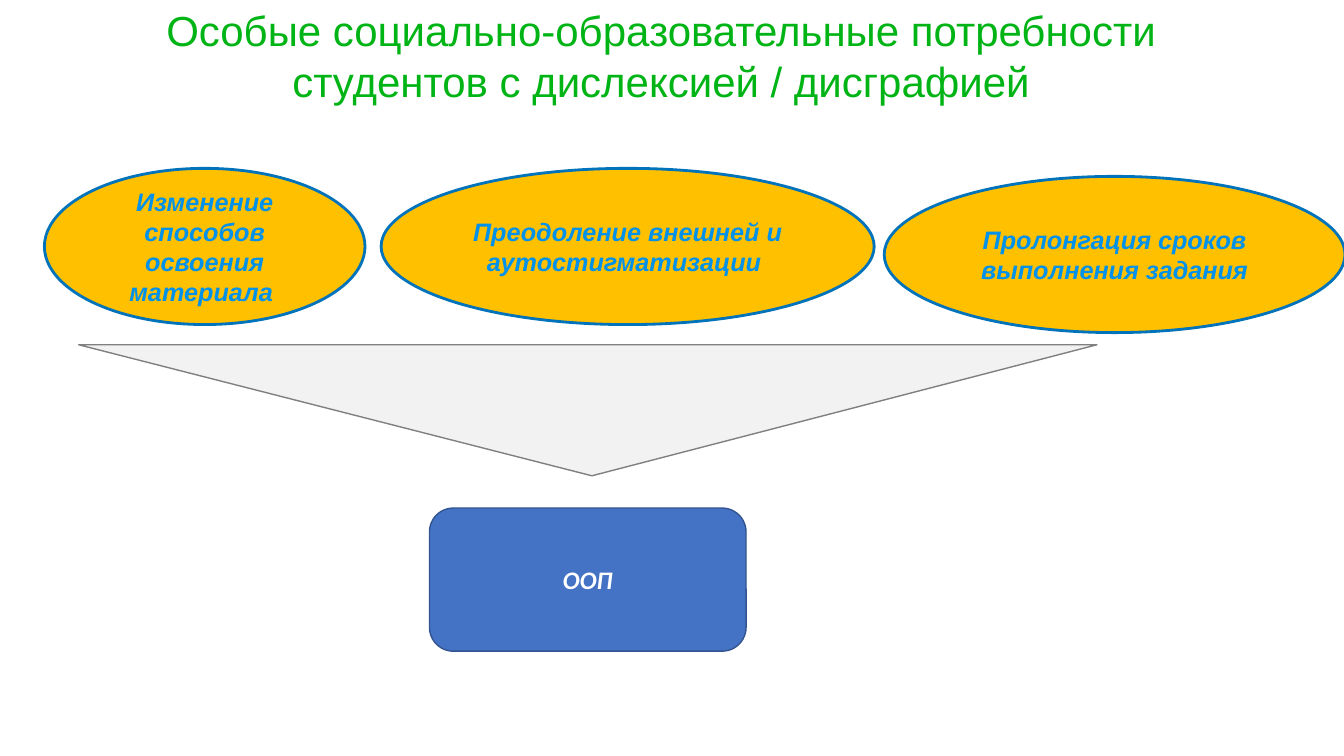
import pptx
import pptx.util
import pptx.dml.color
import pptx.enum.shapes
import pptx.enum.text

RGBColor = pptx.dml.color.RGBColor
Inches = pptx.util.Inches
Pt = pptx.util.Pt
SHAPE = pptx.enum.shapes.MSO_SHAPE
TEXT = pptx.enum.text

GREEN = RGBColor(0x00, 0xB4, 0x15)
AMBER = RGBColor(0xFF, 0xC0, 0x00)
SEA_BLUE = RGBColor(0x00, 0x73, 0xBA)
SKY_BLUE = RGBColor(0x00, 0x91, 0xEA)
PALE_GRAY = RGBColor(0xF2, 0xF2, 0xF2)
GRAY = RGBColor(0x80, 0x80, 0x80)
BLUE = RGBColor(0x44, 0x72, 0xC4)
NAVY = RGBColor(0x32, 0x54, 0x91)
WHITE = RGBColor(0xFF, 0xFF, 0xFF)

WIDTH, HEIGHT = 13.33, 7.5

NEEDS = [
    ("Изменение способов освоения материала ", 0, 0, 3.18),
    ("Преодоление внешней и аутостигматизации ", 3.34, 0, 4.89),
    ("Пролонгация сроков выполнения задания", 8.33, 0.08, 4.57),
]
NEED_HEIGHT = 1.55


def write(frame, text, size, face, color, emphasis):
    frame.word_wrap = True
    paragraph = frame.paragraphs[0]
    paragraph.text = text
    paragraph.alignment = TEXT.PP_ALIGN.CENTER
    font = paragraph.font
    font.size = Pt(size)
    font.name = face
    font.color.rgb = color
    font.bold = font.italic = emphasis


def add_figure(slide, kind, box, fill, outline, weight):
    figure = slide.shapes.add_shape(kind, *map(Inches, box))
    figure.shadow.inherit = False
    figure.fill.solid()
    figure.fill.fore_color.rgb = fill
    figure.line.color.rgb = outline
    figure.line.width = Pt(weight)
    figure.text_frame.vertical_anchor = TEXT.MSO_ANCHOR.MIDDLE
    return figure


def add_title(slide, box):
    title = slide.shapes.add_textbox(*map(Inches, box))
    write(title.text_frame,
          "Особые социально-образовательные потребности студентов с дислексией / дисграфией",
          30, "Arial", GREEN, False)
    title.text_frame.auto_size = TEXT.MSO_AUTO_SIZE.SHAPE_TO_FIT_TEXT


def add_funnel(slide, box):
    funnel = add_figure(slide, SHAPE.ISOSCELES_TRIANGLE, box, PALE_GRAY, GRAY, 1)
    funnel.adjustments[0] = 0.496
    funnel.rotation = 180


def add_needs(slide, left, top):
    for text, across, down, width in NEEDS:
        need = add_figure(slide, SHAPE.OVAL,
                          (left + across, top + down, width, NEED_HEIGHT),
                          AMBER, SEA_BLUE, 2)
        write(need.text_frame, text, 18, "Arial", SKY_BLUE, True)


def add_programme(slide, box):
    programme = add_figure(slide, SHAPE.ROUNDED_RECTANGLE, box, BLUE, NAVY, 1)
    write(programme.text_frame, "ООП", 18, "Calibri", WHITE, True)


def main():
    deck = pptx.Presentation()
    deck.slide_width = Inches(WIDTH)
    deck.slide_height = Inches(HEIGHT)
    slide = deck.slides.add_slide(deck.slide_layouts[6])
    add_title(slide, (0.78, 0, 11.56, 1.11))
    add_funnel(slide, (0.78, 3.42, 10.1, 1.3))
    add_needs(slide, 0.44, 1.67)
    add_programme(slide, (4.26, 5.04, 3.14, 1.42))
    deck.save("out.pptx")


if __name__ == "__main__":
    main()
